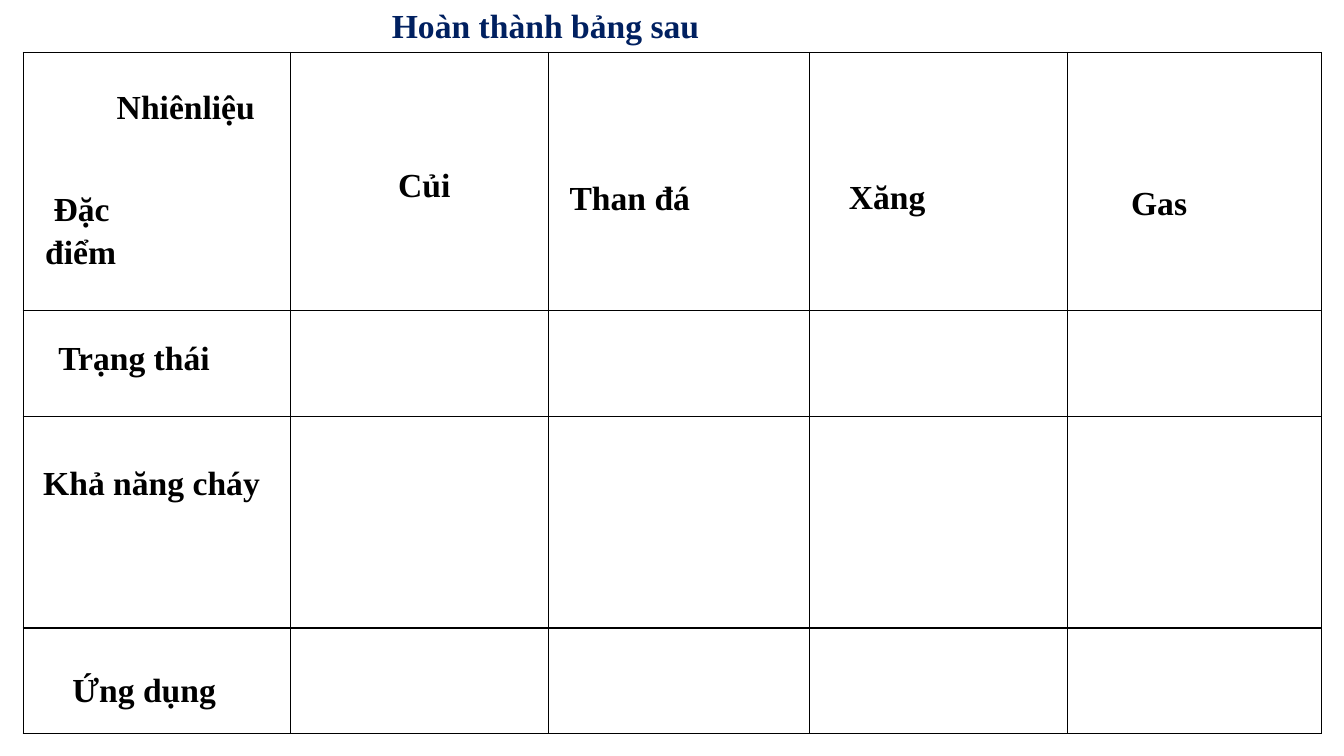
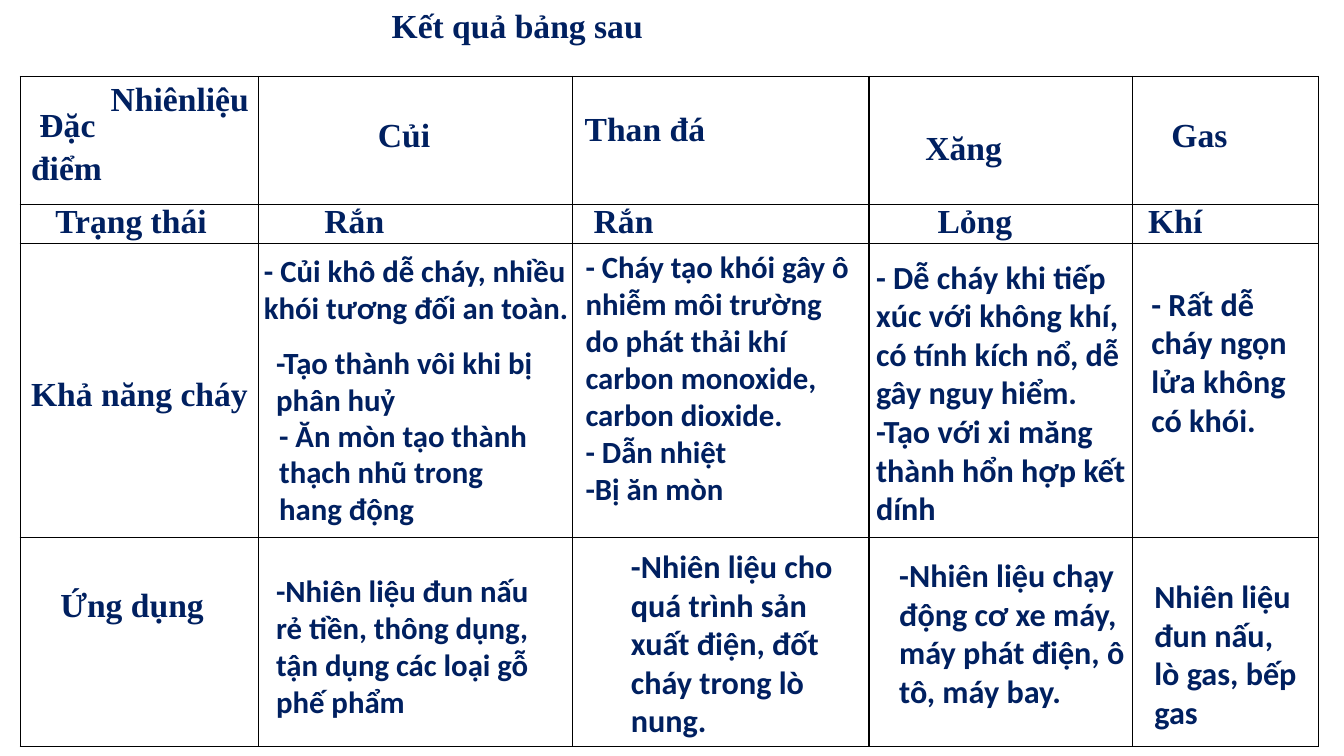
from dataclasses import dataclass

from lxml.etree import SubElement
from pptx import Presentation
from pptx.dml.color import RGBColor
from pptx.enum.text import MSO_ANCHOR as Anchor, MSO_AUTO_SIZE as AutoSize, PP_ALIGN as Align
from pptx.oxml.ns import qn
from pptx.util import Inches, Pt


@dataclass(frozen=True)
class Theme:
    """Colours, fonts and type sizes shared by the slides."""

    black: str = "000000"
    navy: str = "002060"
    label_font: str = "Times New Roman"
    answer_font: str = "Calibri"
    label_size: int = 24
    answer_size: int = 22
    large_answer_size: int = 23
    border_width: int = 1


THEME = Theme()
TITLE_LEFT, TITLE_HEIGHT, LABEL_HEIGHT = 3.77, 0.5, 0.5
CORNER_LABEL = " Đặc điểm"
LABELS = ("Nhiênliệu", CORNER_LABEL, "Củi", "Than đá", "Xăng", "Gas",
          "Trạng thái", "Khả năng cháy", "Ứng dụng")
LABEL_WIDTHS = (1.8, 1.55, 0.83, 1.82, 1.61, 1.52, 2.06, 2.45, 2.23)

EXERCISE_GRID = (0.23, 0.52, (2.65, 2.56, 2.59, 2.56, 2.52), (2.56, 1.05, 2.1, 1.05))
EXERCISE_SPOTS = ((1.06, 0.8), (0.35, 1.79), (3.85, 1.58), (5.55, 1.71), (8.32, 1.7),
                  (11.12, 1.76), (0.48, 3.29), (0.33, 4.53), (0.62, 6.59))

STATE_TOP = 1.93
RESULT_GRID = (0.2, 0.76, (2.36, 3.12, 2.94, 2.61, 1.85), (1.27, 0.39, 2.91, 2.08))
RESULT_SPOTS = ((1, 0.72), (0.21, 0.95), (3.65, 1.08), (5.7, 1.02), (9.08, 1.21),
                (11.52, 1.08), (0.45, STATE_TOP), (0.21, 3.65), (0.5, 5.74))

STATES = (("Rắn", 3.12, 1.64), ("Rắn", 5.79, 0.92), ("Lỏng", 9.2, 1.29), ("Khí", 11.29, 1.03))
ANSWERS = (
    (("- Củi khô dễ cháy, nhiều khói tương đối an toàn.",), (2.52, 2.45, 3.24, 0.84)),
    (("-Tạo thành vôi khi bị phân huỷ",), (2.64, 3.36, 2.95, 0.84)),
    (("- Ăn mòn tạo thành thạch nhũ trong hang động",), (2.67, 4.08, 2.91, 1.21)),
    (("-Nhiên liệu đun nấu rẻ tiền, thông dụng, tận dụng các loại gỗ phế phẩm",),
     (2.64, 5.62, 2.83, 1.58)),
    (("- Cháy tạo khói gây ô nhiễm môi trường do phát thải khí carbon monoxide, carbon dioxide.",
      "- Dẫn nhiệt", "-Bị ăn mòn"), (5.71, 2.41, 2.83, 2.69)),
)
LARGE_ANSWERS = (
    (("- Dễ cháy khi tiếp xúc với không khí, có tính kích nổ, dễ gây nguy hiểm.",
      "-Tạo với xi măng thành hổn hợp kết dính"), (8.59, 2.5, 2.79, 2.81)),
    (("- Rất dễ cháy ngọn lửa không có khói.",), (11.32, 2.77, 1.82, 1.65)),
    (("-Nhiên liệu cho quá trình sản xuất điện, đốt cháy trong lò nung.",),
     (6.16, 5.37, 2.37, 2.04)),
    (("-Nhiên liệu chạy động cơ xe máy, máy phát điện, ô tô, máy bay.",),
     (8.82, 5.46, 2.58, 1.65)),
    (("Nhiên liệu đun nấu, lò gas, bếp gas",), (11.35, 5.67, 1.65, 1.65)),
)


def add_run(paragraph, text, font, size, color):
    """Append one bold run to a paragraph."""
    run = paragraph.add_run()
    run.text = text
    run.font.name = font
    run.font.size = Pt(size)
    run.font.bold = True
    run.font.color.rgb = RGBColor.from_string(color)


def add_titled_slide(deck, heading, width):
    """Add a slide whose title sits above the table."""
    slide = deck.slides.add_slide(deck.slide_layouts[5])
    title = slide.shapes.title
    title.left, title.top = Inches(TITLE_LEFT), Inches(0)
    title.width, title.height = Inches(width), Inches(TITLE_HEIGHT)
    frame = title.text_frame
    frame.word_wrap = False
    frame.auto_size = AutoSize.NONE
    frame.vertical_anchor = Anchor.MIDDLE
    paragraph = frame.paragraphs[0]
    paragraph.alignment = Align.CENTER
    add_run(paragraph, heading, THEME.label_font, THEME.label_size, THEME.navy)
    return slide


def outline_cell(cell):
    """Clear a cell's fill and draw its four borders."""
    properties = cell._tc.get_or_add_tcPr()
    for side in ("a:lnL", "a:lnR", "a:lnT", "a:lnB"):
        border = SubElement(properties, qn(side), w=str(Pt(THEME.border_width)))
        fill = SubElement(border, qn("a:solidFill"))
        SubElement(fill, qn("a:srgbClr"), val=THEME.black)
    cell.fill.background()
    cell.margin_top = cell.margin_bottom = 0


def add_grid(slide, left, top, widths, heights):
    """Add the ruled table that holds the fuel comparison."""
    table = slide.shapes.add_table(
        len(heights), len(widths), Inches(left), Inches(top),
        Inches(sum(widths)), Inches(sum(heights))).table
    table.first_row = table.horz_banding = False
    for column, width in zip(table.columns, widths):
        column.width = Inches(width)
    for row, height in zip(table.rows, heights):
        row.height = Inches(height)
    for cell in table.iter_cells():
        outline_cell(cell)


def add_text(slide, lines, place, font, size, color):
    """Add a wrapped text box with one paragraph per line and return its frame."""
    frame = slide.shapes.add_textbox(*map(Inches, place)).text_frame
    frame.word_wrap = True
    frame.auto_size = AutoSize.SHAPE_TO_FIT_TEXT
    for index, line in enumerate(lines):
        paragraph = frame.add_paragraph() if index else frame.paragraphs[0]
        add_run(paragraph, line, font, size, color)
    return frame


def add_label(slide, label, left, top, width, color):
    """Add a table heading or a one-word state."""
    height = 0.97 if label == CORNER_LABEL else LABEL_HEIGHT
    frame = add_text(slide, (label,), (left, top, width, height),
                     THEME.label_font, THEME.label_size, color)
    if label == CORNER_LABEL:
        paragraph = frame.paragraphs[0]
        paragraph.line_spacing = 1.07
        paragraph.space_before = paragraph.space_after = Pt(6)


def add_comparison(slide, grid, spots, color):
    """Add the table with its row and column headings."""
    add_grid(slide, *grid)
    for label, (left, top), width in zip(LABELS, spots, LABEL_WIDTHS):
        add_label(slide, label, left, top, width, color)


def main():
    """Build and save the two slides."""
    deck = Presentation()
    deck.slide_width, deck.slide_height = Inches(13.33), Inches(7.5)

    exercise = add_titled_slide(deck, "Hoàn thành bảng sau", 3.28)
    add_comparison(exercise, EXERCISE_GRID, EXERCISE_SPOTS, THEME.black)

    result = add_titled_slide(deck, "Kết quả bảng sau", 2.72)
    add_comparison(result, RESULT_GRID, RESULT_SPOTS, THEME.navy)
    for state, left, width in STATES:
        add_label(result, state, left, STATE_TOP, width, THEME.navy)
    for answers, size in ((ANSWERS, THEME.answer_size),
                          (LARGE_ANSWERS, THEME.large_answer_size)):
        for lines, place in answers:
            add_text(result, lines, place, THEME.answer_font, size, THEME.navy)

    deck.save("out.pptx")


if __name__ == "__main__":
    main()
